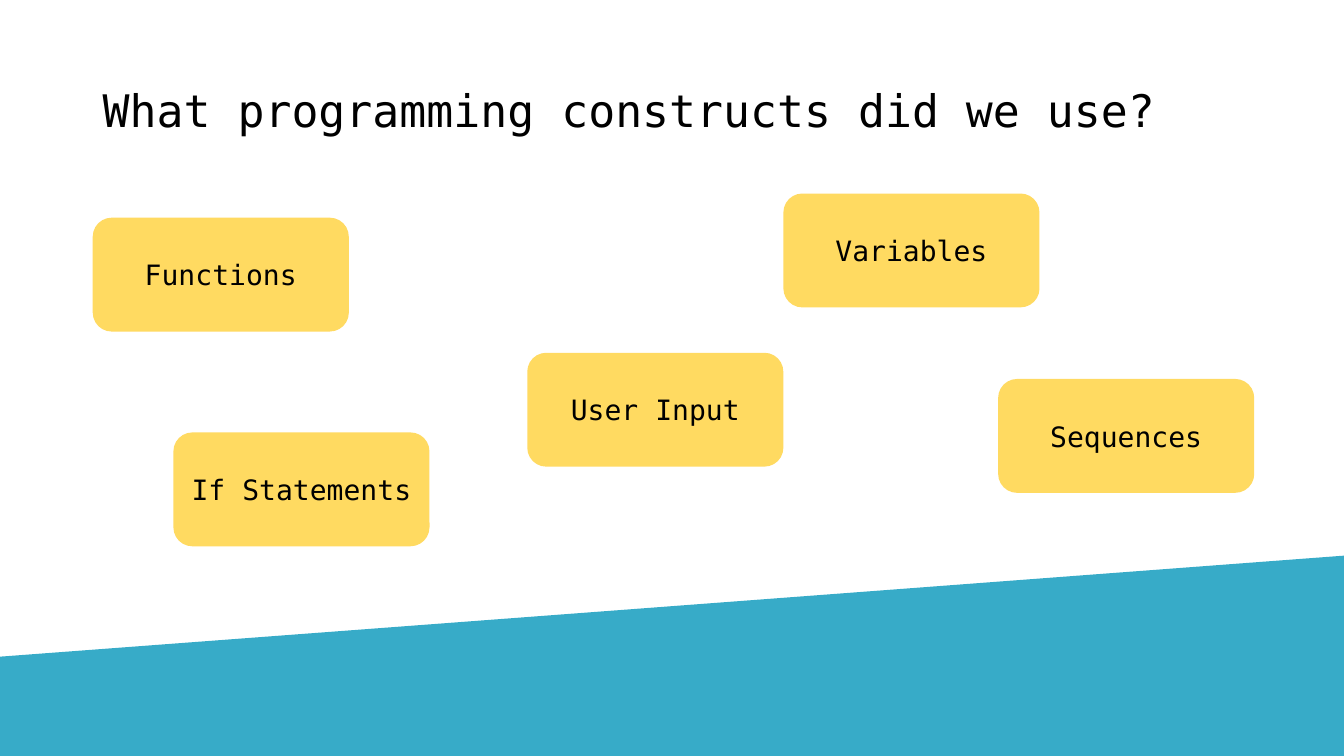
from pptx import Presentation
from pptx.dml.color import RGBColor
from pptx.enum.shapes import MSO_SHAPE as SHAPE
from pptx.enum.text import MSO_ANCHOR as ANCHOR, PP_ALIGN as ALIGN
from pptx.util import Inches, Pt

COLORS = {"band": "37ABC8", "card": "FFDA61", "text": "000000"}
FONT = "DejaVu Sans Mono"
CARD_W, CARD_H = 2.54, 1.13
CONSTRUCTS = [
    ("If Statements", 1.72, 4.29),
    ("Variables", 7.77, 1.92),
    ("Sequences", 9.9, 3.76),
    ("User Input", 5.23, 3.5),
    ("Functions", 0.92, 2.16),
]


def write(sp, text, size=20, align=ALIGN.CENTER, spacing=1.0):
    """Put one formatted, vertically centred paragraph into a shape."""
    tf = sp.text_frame
    tf.word_wrap = True
    tf.vertical_anchor = ANCHOR.MIDDLE
    p = tf.paragraphs[0]
    p.alignment = align
    p.line_spacing = spacing
    r = p.add_run()
    r.text = text
    r.font.name = FONT
    r.font.size = Pt(size)
    r.font.color.rgb = RGBColor.from_string(COLORS["text"])


def add_block(s, kind, x, y, w, h, color):
    """Add a filled preset shape without outline or shadow."""
    sp = s.shapes.add_shape(kind, Inches(x), Inches(y), Inches(w), Inches(h))
    sp.shadow.inherit = False
    sp.fill.solid()
    sp.fill.fore_color.rgb = RGBColor.from_string(COLORS[color])
    sp.line.fill.background()
    return sp


def add_band(s):
    """Add the slanted band along the bottom edge."""
    sp = add_block(s, SHAPE.RECTANGLE, -0.12, 6.01, 13.8, 3.45, "band")
    sp.rotation = 355.7


def add_title(s, text):
    """Add the slide heading."""
    sp = s.shapes.add_textbox(Inches(0.92), Inches(0.4), Inches(11.5), Inches(1.45))
    write(sp, text, size=32, align=ALIGN.LEFT, spacing=0.9)


def add_card(s, text, x, y):
    """Add one rounded card naming a construct."""
    sp = add_block(s, SHAPE.ROUNDED_RECTANGLE, x, y, CARD_W, CARD_H, "card")
    write(sp, text)


def main():
    """Build and save the slide."""
    prs = Presentation()
    prs.slide_width, prs.slide_height = Inches(13.33), Inches(7.5)
    s = prs.slides.add_slide(prs.slide_layouts[6])
    add_band(s)
    add_title(s, "What programming constructs did we use?")
    for text, x, y in CONSTRUCTS:
        add_card(s, text, x, y)
    prs.save("out.pptx")


if __name__ == "__main__":
    main()
